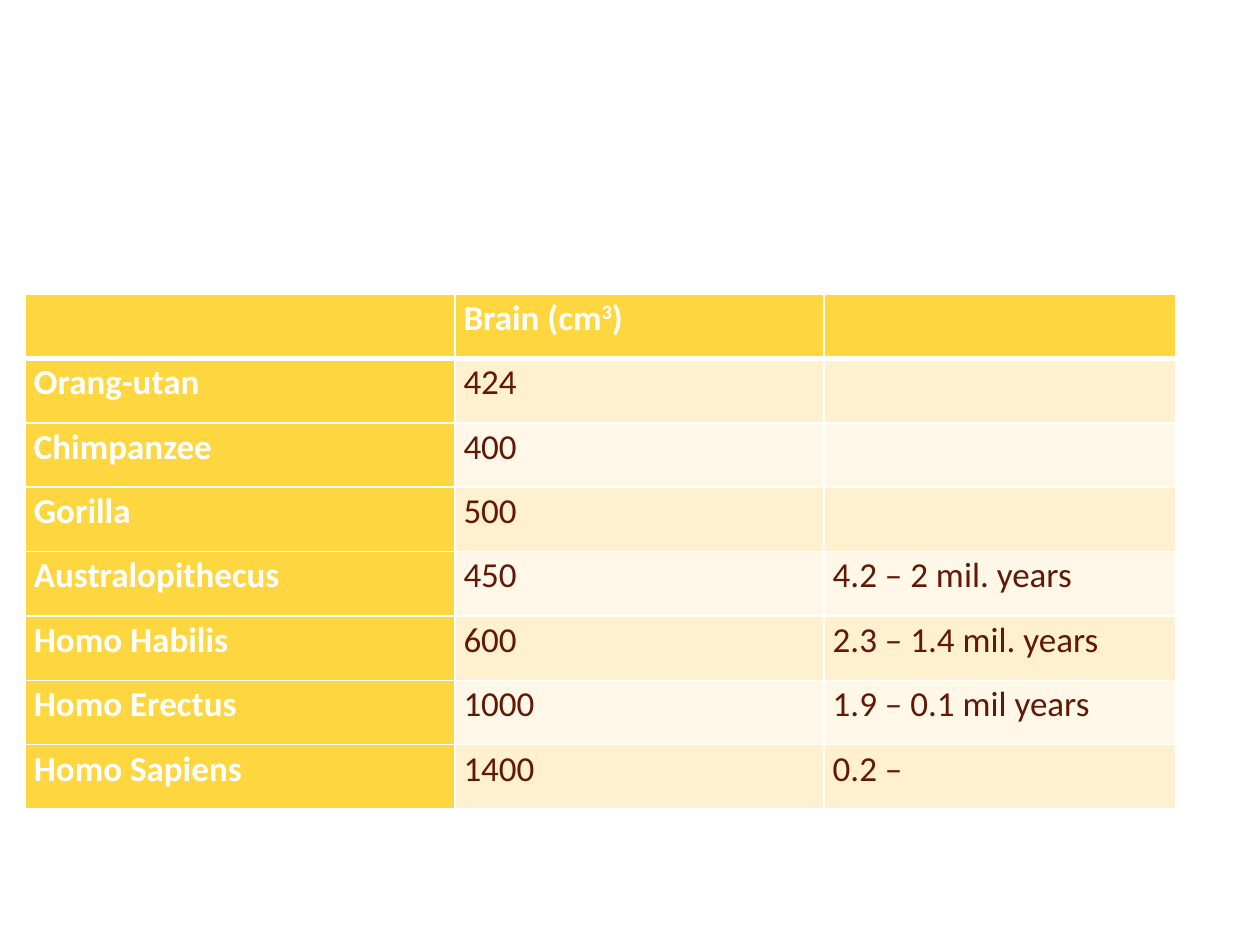
"""Build a slide with a table of brain volumes of apes and hominins."""
from dataclasses import dataclass

from lxml.etree import SubElement
from pptx import Presentation
from pptx.dml.color import RGBColor
from pptx.oxml.ns import qn
from pptx.table import _Cell
from pptx.util import Pt

WHITE, GOLD, BROWN = "FFFFFF", "FED640", "621805"
BANDS = ("FFF0CF", "FFF7E8")
COLUMN_WIDTHS = (245.5, 211, 200.9)
ROW_HEIGHT = 36.8


@dataclass(frozen=True)
class Species:
    name: str
    brain: str
    period: str = ""


SPECIES = (
    Species("Orang-utan", "424"),
    Species("Chimpanzee", "400"),
    Species("Gorilla", "500"),
    Species("Australopithecus", "450", "4.2 – 2 mil. years"),
    Species("Homo Habilis", "600", "2.3 – 1.4 mil. years"),
    Species("Homo Erectus", "1000", "1.9 – 0.1 mil years"),
    Species("Homo Sapiens", "1400", "0.2 –"),
)


def color(value: str) -> RGBColor:
    return RGBColor.from_string(value)


def draw_border(cell: _Cell, side: str, width: float) -> None:
    line = SubElement(cell._tc.get_or_add_tcPr(), qn(f"a:ln{side}"), w=str(Pt(width)))
    SubElement(SubElement(line, qn("a:solidFill")), qn("a:srgbClr"), val=WHITE)


def style_cell(cell: _Cell, fill: str, top: float, bottom: float) -> None:
    for side, width in (("L", 1), ("R", 1), ("T", top), ("B", bottom)):
        draw_border(cell, side, width)
    cell.fill.solid()
    cell.fill.fore_color.rgb = color(fill)
    cell.margin_left = cell.margin_right = Pt(5)
    cell.margin_top = cell.margin_bottom = Pt(0)


def write_cell(cell: _Cell, parts: tuple[str, ...], ink: str, bold: bool) -> None:
    paragraph = cell.text_frame.paragraphs[0]
    paragraph.line_spacing = 1.07
    paragraph.space_after = Pt(8)
    for index, part in enumerate(parts):
        run = paragraph.add_run()
        run.text = part
        run.font.name = "Calibri"
        run.font.size = Pt(20)
        run.font.bold = bold
        run.font.color.rgb = color(ink)
        if index == 1:
            run.font._element.set("baseline", "30000")


def main() -> None:
    presentation = Presentation()
    presentation.slide_width, presentation.slide_height = Pt(720), Pt(540)
    slide = presentation.slides.add_slide(presentation.slide_layouts[6])

    rows = [((), ("Brain (cm", "3", ")"), ())]
    for species in SPECIES:
        values = (species.name, species.brain, species.period)
        rows.append(tuple((value,) if value else () for value in values))

    brain_table = slide.shapes.add_table(
        len(rows), len(COLUMN_WIDTHS), Pt(14.4), Pt(168),
        Pt(sum(COLUMN_WIDTHS)), Pt(ROW_HEIGHT * len(rows)),
    ).table
    for column, width in zip(brain_table.columns, COLUMN_WIDTHS):
        column.width = Pt(width)

    for row_index, row in enumerate(rows):
        brain_table.rows[row_index].height = Pt(ROW_HEIGHT)
        for column_index, parts in enumerate(row):
            cell = brain_table.cell(row_index, column_index)
            heading = row_index == 0 or column_index == 0
            fill = GOLD if heading else BANDS[(row_index - 1) % 2]
            top = 3 if row_index == 1 else 1
            bottom = 3 if row_index == 0 else 1
            style_cell(cell, fill, top, bottom)
            write_cell(cell, parts, WHITE if heading else BROWN, heading)

    presentation.save("out.pptx")


if __name__ == "__main__":
    main()
